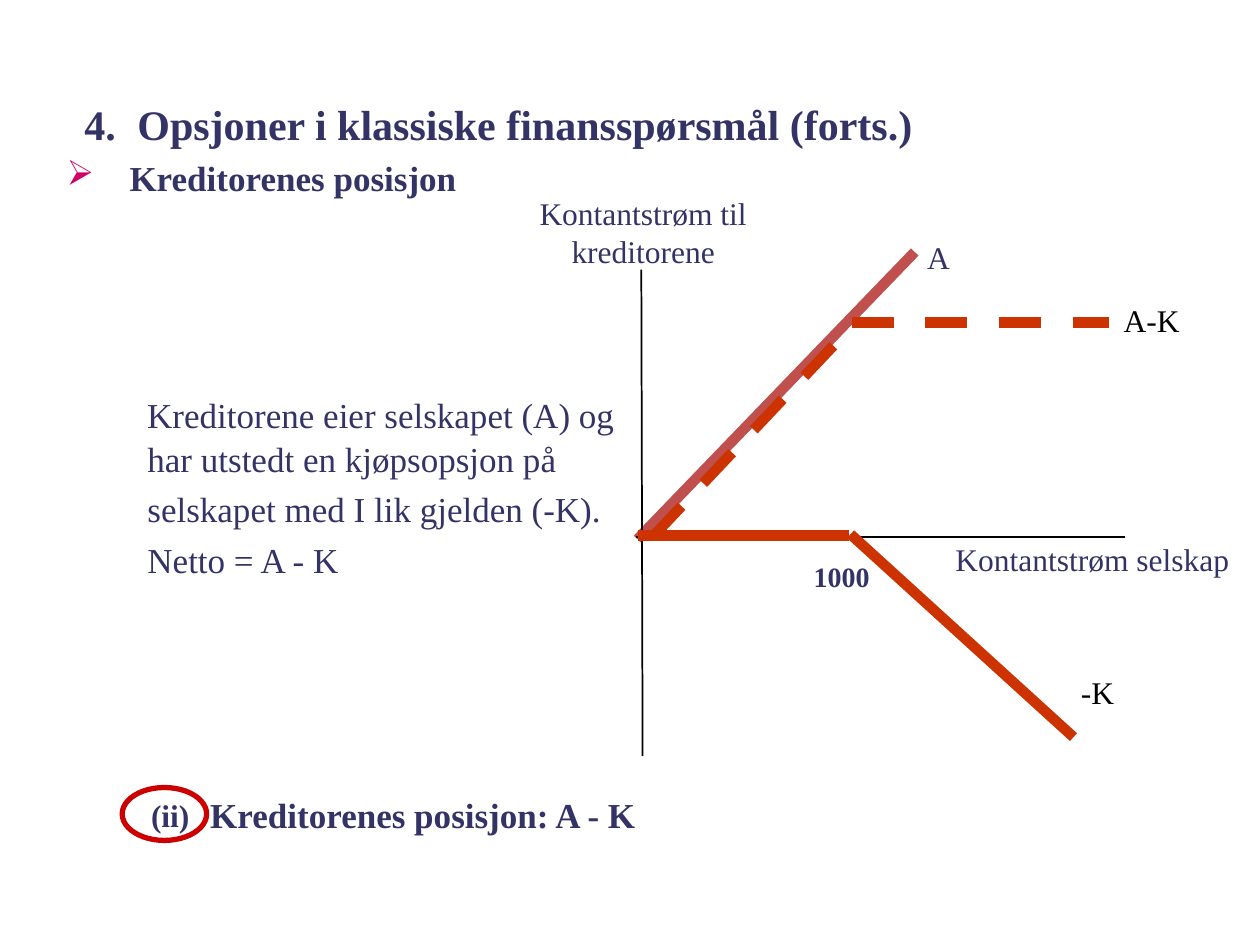
from dataclasses import dataclass
from typing import Optional

from lxml import etree
from pptx import Presentation
from pptx.dml.color import RGBColor
from pptx.enum.dml import MSO_LINE
from pptx.enum.shapes import MSO_CONNECTOR, MSO_SHAPE
from pptx.enum.text import MSO_ANCHOR, MSO_AUTO_SIZE, PP_ALIGN
from pptx.oxml.ns import qn
from pptx.util import Pt

EMU_PER_PX = 9144
FONT = "Times New Roman"
NAVY = RGBColor(0x33, 0x33, 0x66)
BLACK = RGBColor(0, 0, 0)
ASSET_RED = RGBColor(0xC0, 0x50, 0x4D)
DEBT_RED = RGBColor(0xCC, 0x33, 0x00)
RING_RED = RGBColor(0xCC, 0x00, 0x00)
BULLET_PINK = RGBColor(0xCC, 0x00, 0x66)
LEFT, CENTER = PP_ALIGN.LEFT, PP_ALIGN.CENTER
MIDDLE, TOP = MSO_ANCHOR.MIDDLE, MSO_ANCHOR.TOP
FIT_SHAPE, NO_FIT = MSO_AUTO_SIZE.SHAPE_TO_FIT_TEXT, MSO_AUTO_SIZE.NONE
STRAIGHT, OVAL = MSO_CONNECTOR.STRAIGHT, MSO_SHAPE.OVAL
DASH = MSO_LINE.DASH


@dataclass
class Label:
    text: str
    left: int
    top: int
    width: int
    height: int
    size: int = 18
    color: RGBColor = NAVY
    bold: bool = False
    align: PP_ALIGN = LEFT
    bullet: Optional[str] = None


@dataclass
class Segment:
    x1: int
    y1: int
    x2: int
    y2: int
    color: RGBColor = DEBT_RED
    width: int = 6
    dashed: bool = False


LABELS = [
    Label("Kreditorenes posisjon: A - K", 157, 625, 392, 43, 20, bold=True),
    Label("(ii)", 110, 627, 55, 40, bold=True),
    Label("Kreditorenes posisjon", 43, 119, 583, 43, 20, bold=True, bullet="➢"),
    Label("1000", 636, 439, 88, 36, 16, bold=True),
    Label("Kontantstrøm selskap", 730, 424, 274, 40, align=CENTER),
    Label("Kontantstrøm til kreditorene", 399, 149, 223, 70, align=CENTER),
    Label("A", 726, 184, 50, 40),
    Label("-K", 848, 529, 50, 40, color=BLACK),
    Label("A-K", 882, 234, 83, 40, color=BLACK),
    Label("Kreditorene eier selskapet (A) og", 107, 307, 417, 43, 20),
]

SEGMENTS = [
    Segment(506, 428, 726, 200, ASSET_RED),
    Segment(509, 214, 510, 600, BLACK, 1),
    Segment(505, 426, 893, 426, BLACK, 1),
    Segment(506, 425, 674, 425),
    Segment(675, 424, 852, 585),
    Segment(518, 426, 676, 259, dashed=True),
    Segment(676, 256, 880, 256, dashed=True),
]

EXPLANATION = [
    "har utstedt en kjøpsopsjon på",
    "selskapet med I lik gjelden (-K).",
    "Netto = A - K",
]


def px(value: int) -> int:
    return value * EMU_PER_PX


def place(shape, left: int, top: int, width: int, height: int) -> None:
    shape.left, shape.top = px(left), px(top)
    shape.width, shape.height = px(width), px(height)


def format_runs(paragraph, size: int, color: RGBColor, bold: bool) -> None:
    for run in paragraph.runs:
        run.font.name = FONT
        run.font.size = Pt(size)
        run.font.bold = bold
        run.font.color.rgb = color


def set_indent(paragraph, margin: int, first_line: int):
    properties = paragraph._p.get_or_add_pPr()
    properties.set("marL", str(px(margin)))
    properties.set("indent", str(px(first_line)))
    return properties


def add_bullet(paragraph, character: str) -> None:
    properties = set_indent(paragraph, 50, -50)
    bullet_color = etree.SubElement(properties, qn("a:buClr"))
    etree.SubElement(bullet_color, qn("a:srgbClr"), val=str(BULLET_PINK))
    etree.SubElement(properties, qn("a:buChar"), char=character)


def draw_label(slide, label: Label) -> None:
    box = slide.shapes.add_textbox(
        px(label.left), px(label.top), px(label.width), px(label.height))
    frame = box.text_frame
    frame.text = label.text
    frame.word_wrap = True
    frame.auto_size = FIT_SHAPE
    paragraph = frame.paragraphs[0]
    if label.bullet:
        add_bullet(paragraph, label.bullet)
    paragraph.alignment = label.align
    format_runs(paragraph, label.size, label.color, label.bold)


def draw_segment(slide, segment: Segment) -> None:
    connector = slide.shapes.add_connector(
        STRAIGHT, px(segment.x1), px(segment.y1), px(segment.x2), px(segment.y2))
    connector.line.color.rgb = segment.color
    connector.line.width = Pt(segment.width)
    if segment.dashed:
        connector.line.dash_style = DASH
    etree.SubElement(connector._element.spPr, qn("a:effectLst"))


def draw_title(slide) -> None:
    title = slide.shapes.title
    place(title, 57, 52, 892, 92)
    frame = title.text_frame
    frame.text = "4.\tOpsjoner i klassiske finansspørsmål (forts.)"
    frame.vertical_anchor = MIDDLE
    frame.auto_size = NO_FIT
    heading = frame.paragraphs[0]
    set_indent(heading, 42, -42)
    heading.alignment = LEFT
    format_runs(heading, 24, NAVY, True)


def draw_explanation(slide) -> None:
    body = slide.placeholders[1]
    place(body, 107, 342, 400, 127)
    frame = body.text_frame
    frame.text = "\n".join(EXPLANATION)
    frame.vertical_anchor = TOP
    frame.auto_size = NO_FIT
    for index, paragraph in enumerate(frame.paragraphs):
        properties = set_indent(paragraph, 0, 0)
        etree.SubElement(properties, qn("a:buNone"))
        paragraph.space_before = Pt(5 if index else 0)
        format_runs(paragraph, 20, NAVY, False)


def draw_ring(slide) -> None:
    ring = slide.shapes.add_shape(OVAL, px(97), px(625), px(67), px(42))
    ring.shadow.inherit = False
    ring.fill.background()
    ring.line.color.rgb = RING_RED
    ring.line.width = Pt(3)


def main() -> None:
    presentation = Presentation()
    presentation.slide_width, presentation.slide_height = px(1000), px(750)
    slide = presentation.slides.add_slide(presentation.slide_layouts[1])
    draw_title(slide)
    draw_explanation(slide)
    draw_ring(slide)
    for segment in SEGMENTS:
        draw_segment(slide, segment)
    for label in LABELS:
        draw_label(slide, label)
    presentation.save("out.pptx")


if __name__ == "__main__":
    main()
